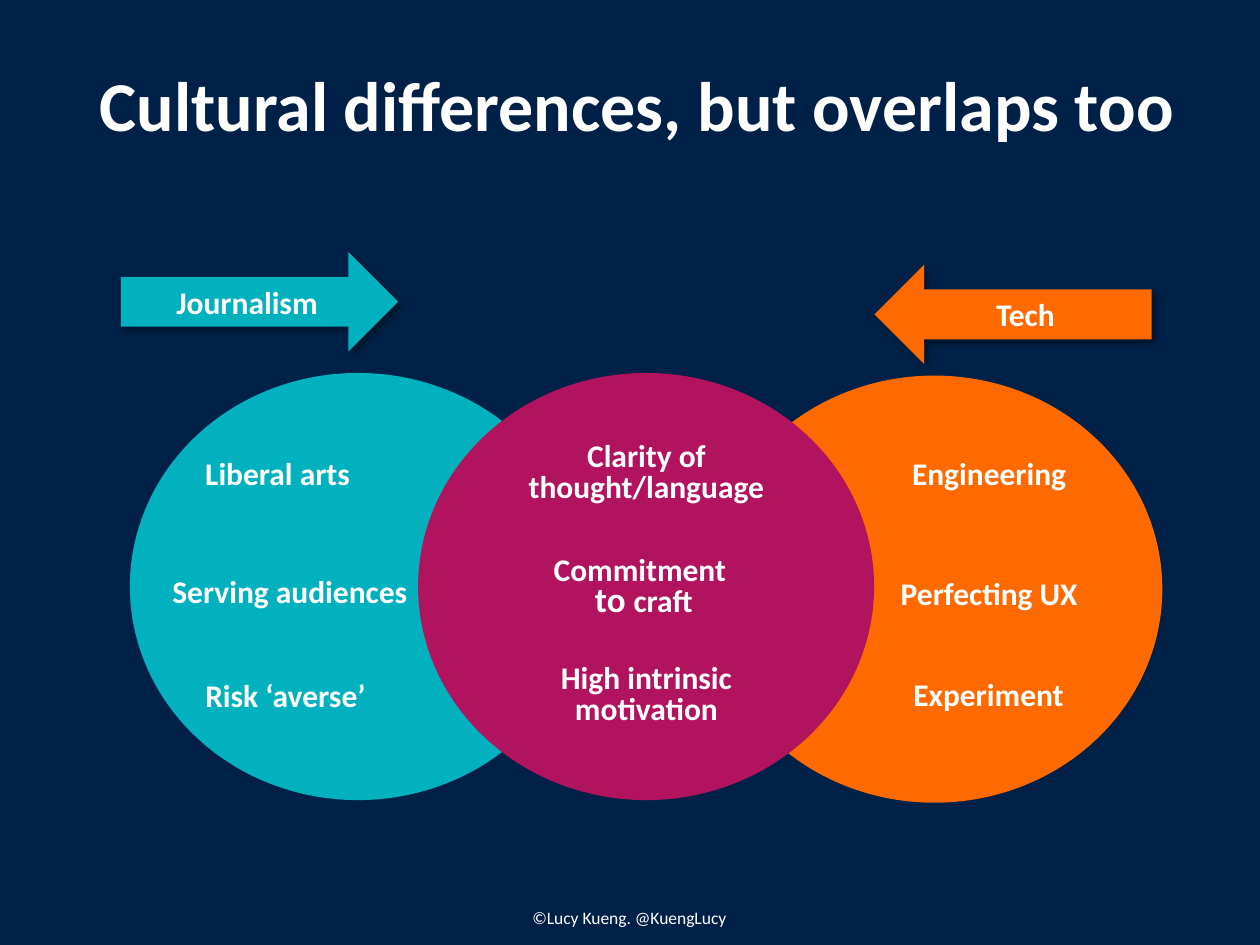
"""Build a slide of overlapping circles comparing journalism and tech culture."""
from dataclasses import dataclass
from typing import Optional

from lxml import etree
from pptx import Presentation
from pptx import util as u
from pptx.dml.color import RGBColor
from pptx.enum import shapes, text
from pptx.oxml import parse_xml
from pptx.oxml.ns import nsdecls, qn

NAVY = RGBColor(0x00, 0x21, 0x47)
TEAL = RGBColor(0x01, 0xB2, 0xBE)
ORANGE = RGBColor(0xFE, 0x69, 0x00)
PLUM = RGBColor(0xB2, 0x13, 0x5F)
WHITE = RGBColor(0xFF, 0xFF, 0xFF)

OVAL = shapes.MSO_SHAPE.OVAL
RIGHT = shapes.MSO_SHAPE.RIGHT_ARROW
LEFT = shapes.MSO_SHAPE.LEFT_ARROW
CENTER = text.PP_ALIGN.CENTER
MIDDLE = text.MSO_ANCHOR.MIDDLE
GROW = text.MSO_AUTO_SIZE.SHAPE_TO_FIT_TEXT
FONT = {"name": "Calibri", "bold": True, "size": u.Pt(18)}
SHADOW = (
    f'<a:effectLst {nsdecls("a")}><a:outerShdw blurRad="{u.Pt(4)}" dist="{u.Pt(3)}" '
    'dir="2700000" algn="tl" rotWithShape="0"><a:srgbClr val="000000">'
    '<a:alpha val="40000"/></a:srgbClr></a:outerShdw></a:effectLst>'
)


@dataclass(frozen=True)
class Figure:
    kind: shapes.MSO_SHAPE
    x: float
    y: float
    w: float
    h: float
    color: RGBColor
    caption: str = ""


@dataclass(frozen=True)
class Label:
    x: float
    y: float
    w: float
    h: float
    lines: tuple
    align: Optional[text.PP_ALIGN] = None
    spacing: Optional[float] = None
    wrap: bool = False
    size: float = 18
    bold: bool = True


CIRCLE_W, CIRCLE_H, STEP = 260.6, 244.1, 164.7
ARROW_W, ARROW_H = 158.4, 56.9
LEADING = u.Pt(18)

SIDE_CIRCLES = (
    Figure(OVAL, 74.2, 213.1, CIRCLE_W, CIRCLE_H, TEAL),
    Figure(OVAL, 74.2 + 2 * STEP, 214.6, CIRCLE_W, CIRCLE_H, ORANGE),
)
FRONT_FIGURES = (
    Figure(RIGHT, 69.1, 144, ARROW_W, ARROW_H, TEAL, "Journalism"),
    Figure(LEFT, 499.7, 151.2, ARROW_W, ARROW_H, ORANGE, "Tech"),
    Figure(OVAL, 74.2 + STEP, 213.1, CIRCLE_W, CIRCLE_H, PLUM),
)
TITLE = Label(36, 31.7, 655.9, 61.2, ("Cultural differences, but overlaps too",),
              CENTER, 0.9, True, 40)
SIDE_LABELS = (
    Label(110.2, 255.6, 97.9, 29, ("Liberal arts",)),
    Label(514.1, 255.6, 103, 29, ("Engineering",)),
    Label(91.4, 323.3, 149.8, 29, ("Serving audiences",)),
    Label(110.2, 383, 106.6, 29, ("Risk ‘averse’",)),
    Label(507.6, 324.7, 116.6, 29, ("Perfecting UX",)),
    Label(514.8, 382.3, 100.8, 29, ("Experiment",)),
)
SHARED_LABELS = (
    Label(287.3, 249.1, 164.2, 43.9, ("Clarity of thought/language",), CENTER, LEADING, True),
    Label(285.8, 314.6, 164.2, 44.6,
          (("Commitment", (" ", 20)), (("to ", 20), "craft")), CENTER, LEADING, True),
    Label(312.5, 375.8, 113.8, 43.9, ("High intrinsic", "motivation"), CENTER, LEADING),
)
CREDIT = Label(295.9, 514.8, 127.4, 19.4, ("©Lucy Kueng. @KuengLucy",), CENTER,
               size=10, bold=False)


def add_run(p, content: str, **changes) -> None:
    """Append a formatted white run to a paragraph."""
    r = p.add_run()
    r.text = content
    for key, value in (FONT | changes).items():
        setattr(r.font, key, value)
    r.font.color.rgb = WHITE


def draw_figure(s, fig: Figure) -> None:
    """Draw a circle, or an arrow with its caption and shadow."""
    sp = s.shapes.add_shape(fig.kind, *map(u.Pt, (fig.x, fig.y, fig.w, fig.h)))
    sp.shadow.inherit = False
    sp.fill.solid()
    sp.fill.fore_color.rgb = fig.color
    sp.line.fill.background()
    if fig.caption:
        effects: etree._Element = sp._element.spPr.find(qn("a:effectLst"))
        effects.getparent().replace(effects, parse_xml(SHADOW))
        sp.text_frame.vertical_anchor = MIDDLE
        p = sp.text_frame.paragraphs[0]
        p.alignment = CENTER
        add_run(p, fig.caption)


def draw_label(s, label: Label, **frame_format) -> None:
    """Draw a text box whose lines may mix run sizes."""
    sp = s.shapes.add_textbox(*map(u.Pt, (label.x, label.y, label.w, label.h)))
    tf = sp.text_frame
    for key, value in ({"word_wrap": label.wrap, "auto_size": GROW} | frame_format).items():
        setattr(tf, key, value)
    p = tf.paragraphs[0]
    for key, value in {"alignment": label.align, "line_spacing": label.spacing}.items():
        setattr(p, key, value)
    for i, line in enumerate(label.lines):
        if i:
            p.add_line_break()
        for part in (line,) if isinstance(line, str) else line:
            content, size = (part, label.size) if isinstance(part, str) else part
            add_run(p, content, size=u.Pt(size), bold=label.bold)


def main() -> None:
    """Assemble and save the slide."""
    prs = Presentation()
    prs.slide_width, prs.slide_height = u.Pt(720), u.Pt(540)
    s = prs.slides.add_slide(prs.slide_layouts[6])
    s.background.fill.solid()
    s.background.fill.fore_color.rgb = NAVY

    draw_label(s, TITLE, vertical_anchor=MIDDLE, auto_size=text.MSO_AUTO_SIZE.NONE)
    for fig in SIDE_CIRCLES:
        draw_figure(s, fig)
    for label in SIDE_LABELS:
        draw_label(s, label)
    for fig in FRONT_FIGURES:
        draw_figure(s, fig)
    for label in (*SHARED_LABELS, CREDIT):
        draw_label(s, label)
    prs.save("out.pptx")


if __name__ == "__main__":
    main()
